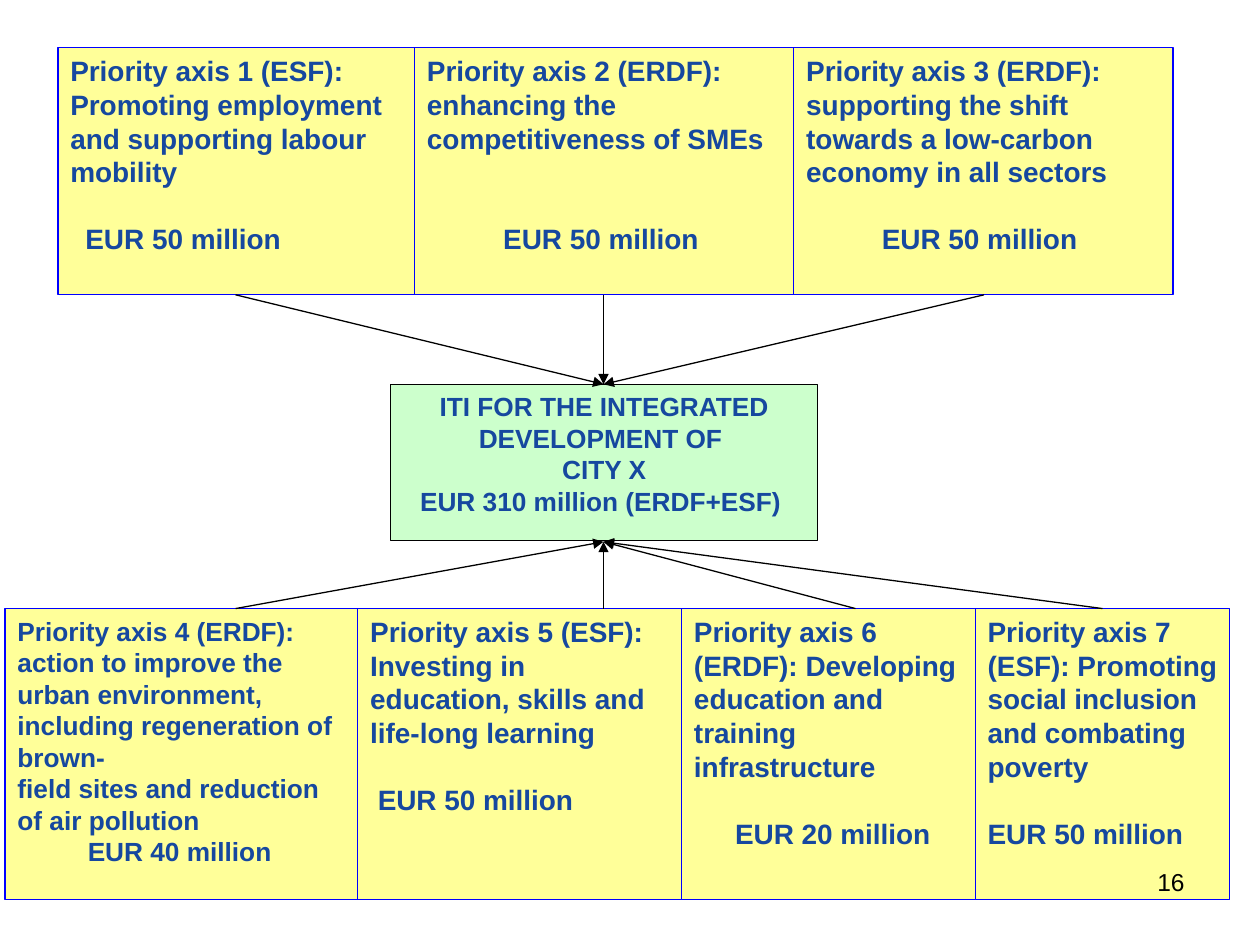
import pptx
import pptx.util
import pptx.dml.color
import pptx.enum.shapes
import pptx.enum.text
import pptx.oxml.ns
import lxml.etree
from dataclasses import dataclass

COLUMNS, ROWS = 100, 75
WIDTH, HEIGHT = pptx.util.Inches(10), pptx.util.Inches(7.5)
LEFT, CENTRE, RIGHT = (pptx.enum.text.PP_ALIGN.LEFT, pptx.enum.text.PP_ALIGN.CENTER,
                       pptx.enum.text.PP_ALIGN.RIGHT)
NAVY, BLACK, BLUE, YELLOW, GREEN = "16489F", "000000", "0000FF", "FFFF99", "CCFFCC"
LINE_FACTOR = 1.2


@dataclass
class Axis:
    """A priority axis: its column span, arrow column, wording and amount style."""
    left: float
    width: float
    arrow: float
    aims: list
    amount: str
    align: object = LEFT
    gap: int = 1
    indent: float = 0
    size: int = 16


UPPER = [
    Axis(4.6, 28.3, 18.7, ["Priority axis 1 (ESF):",
         "Promoting employment and supporting labour mobility"], "EUR 50 million", indent=1.2),
    Axis(32.9, 30.2, 47.9, ["Priority axis 2 (ERDF): enhancing the competitiveness of SMEs"],
         "EUR 50 million ", CENTRE, gap=2),
    Axis(63, 30.1, 78.1, ["Priority axis 3 (ERDF): supporting the shift towards a low-carbon "
         "economy in all sectors"], "EUR 50 million ", CENTRE),
]
LOWER = [
    Axis(0.4, 28.3, 18.7, ["Priority axis 4 (ERDF): action to improve the urban environment, "
         "including regeneration of brown-", "field sites and reduction of air pollution"],
         "EUR 40 million ", CENTRE, gap=0, size=15),
    Axis(28.4, 25.7, 47.9, ["Priority axis 5 (ESF): Investing in education, skills and "
         "life-long learning"], "EUR 50 million", indent=0.6),
    Axis(54.1, 24, 67.9, ["Priority axis 6 (ERDF): Developing education and training "
         "infrastructure"], "EUR 20 million", CENTRE),
    Axis(77.4, 20.2, 87.5, ["Priority axis 7 (ESF): Promoting social inclusion and combating "
         "poverty"], "EUR 50 million"),
]


def colour(value):
    """Turn a hex string into a colour."""
    return pptx.dml.color.RGBColor.from_string(value)


def across(columns):
    """Give the length of a number of grid columns."""
    return round(WIDTH * columns / COLUMNS)


def down(rows):
    """Give the length of a number of grid rows."""
    return round(HEIGHT * rows / ROWS)


def grid(left, top, width, height):
    """Turn a box in grid units into slide lengths."""
    return across(left), down(top), across(width), down(height)


def write(frame, text, size, align, ink=NAVY, bold=True):
    """Add one formatted paragraph to a text frame and return it."""
    first = frame.paragraphs[0]
    paragraph = first if not first.runs else frame.add_paragraph()
    paragraph.alignment = align
    paragraph.line_spacing = pptx.util.Pt(size * LINE_FACTOR)
    run = paragraph.add_run()
    run.text = text
    run.font.name = "Arial"
    run.font.size = pptx.util.Pt(size)
    run.font.bold = bold
    run.font.color.rgb = colour(ink)
    return paragraph


def add_panel(slide, box, fill, edge):
    """Draw an outlined rectangle and return its text frame."""
    panel = slide.shapes.add_shape(pptx.enum.shapes.MSO_SHAPE.RECTANGLE, *grid(*box))
    panel.shadow.inherit = False
    panel.fill.solid()
    panel.fill.fore_color.rgb = colour(fill)
    panel.line.color.rgb = colour(edge)
    panel.line.width = pptx.util.Pt(0.75)
    panel.text_frame.word_wrap = True
    panel.text_frame.vertical_anchor = pptx.enum.text.MSO_ANCHOR.TOP
    return panel.text_frame


def add_arrow(slide, start, end):
    """Draw a thin arrow between two grid points."""
    arrow = slide.shapes.add_connector(
        pptx.enum.shapes.MSO_CONNECTOR.STRAIGHT,
        across(start[0]), down(start[1]), across(end[0]), down(end[1]))
    arrow.line.color.rgb = colour(BLACK)
    arrow.line.width = pptx.util.Pt(0.75)
    tail = lxml.etree.SubElement(arrow.line._get_or_add_ln(), pptx.oxml.ns.qn("a:tailEnd"))
    tail.set("type", "triangle")
    lxml.etree.SubElement(arrow._element.spPr, pptx.oxml.ns.qn("a:effectLst"))


def add_axis_row(slide, axes, top, height):
    """Place a row of priority axes."""
    for axis in axes:
        frame = add_panel(slide, (axis.left, top, axis.width, height), YELLOW, BLUE)
        for aim in axis.aims:
            write(frame, aim, axis.size, LEFT)
        amount = write(frame, axis.amount, axis.size, axis.align)
        amount.space_before = pptx.util.Pt(axis.gap * axis.size * LINE_FACTOR)
        if axis.indent:
            amount._p.get_or_add_pPr().set("marL", str(across(axis.indent)))


def add_arrows(slide, axes, start_row, target):
    """Lead every axis of a row to the shared target point."""
    for axis in axes:
        add_arrow(slide, (axis.arrow, start_row), target)


def add_investment(slide, box):
    """Place the central integrated investment."""
    frame = add_panel(slide, box, GREEN, BLACK)
    for text in ("ITI FOR THE INTEGRATED DEVELOPMENT OF ", "CITY X",
                 "EUR 310 million (ERDF+ESF) "):
        write(frame, text, 15, CENTRE)


def add_page_number(slide, box):
    """Place the page number."""
    frame = slide.shapes.add_textbox(*grid(*box)).text_frame
    frame.word_wrap = True
    write(frame, "16", 14, RIGHT, BLACK, False)


def main():
    """Build and save the slide."""
    deck = pptx.Presentation()
    deck.slide_width, deck.slide_height = WIDTH, HEIGHT
    slide = deck.slides.add_slide(deck.slide_layouts[6])
    add_investment(slide, (31, 30.5, 33.9, 12.4))
    add_axis_row(slide, UPPER, 3.8, 19.6)
    add_axis_row(slide, LOWER, 48.3, 23.1)
    add_arrows(slide, UPPER, 23.4, (47.9, 30.5))
    add_arrows(slide, LOWER, 48.3, (47.9, 43))
    add_page_number(slide, (71.7, 68.3, 23.3, 5.2))
    deck.save("out.pptx")


if __name__ == "__main__":
    main()
